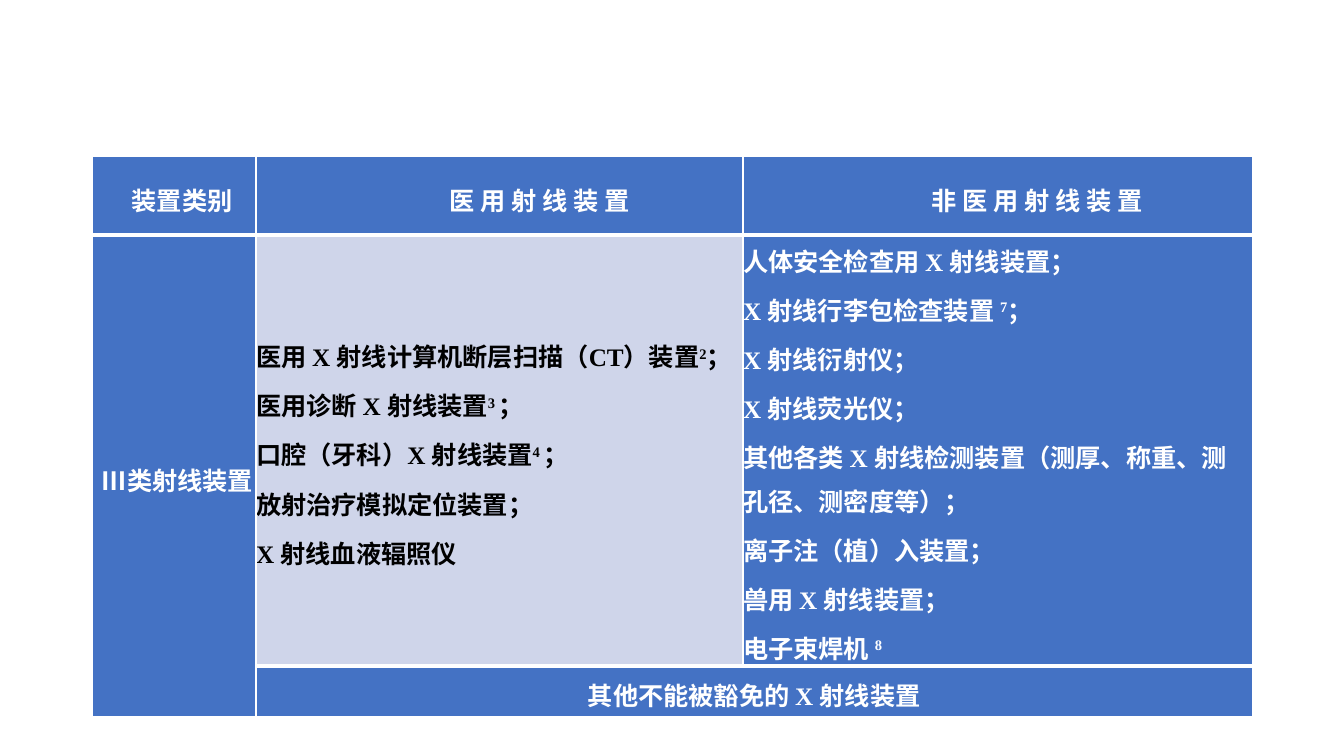
from pptx import Presentation
from pptx.dml.color import RGBColor
from pptx.enum.lang import MSO_LANGUAGE_ID as Language
from pptx.enum.text import MSO_ANCHOR as Anchor, PP_ALIGN as Align
from pptx.oxml.ns import qn
from pptx.util import Inches, Pt
from lxml.etree import SubElement

WHITE = RGBColor(0xFF, 0xFF, 0xFF)
BLACK = RGBColor(0, 0, 0)
BLUE = RGBColor(0x44, 0x72, 0xC4)
PALE = RGBColor(0xCF, 0xD5, 0xEA)
FONT = "Times New Roman"

COLUMN_WIDTHS = (1.62, 4.83, 5.05)
ROW_HEIGHTS = (0.78, 3.84, 0.5)

HEADERS = (
    ("装置类别", 0.15),
    ("医 用 射 线 装 置", 0.79),
    ("非 医 用 射 线 装 置", 0.78),
)
CATEGORY = "Ⅲ类射线装置"
# Every second piece of a line is a superscript note number.
MEDICAL = [
    ("医用 X 射线计算机断层扫描（CT）装置", "2", "；"),
    ("医用诊断 X 射线装置", "3 ", "；"),
    ("口腔（牙科）X 射线装置", "4 ", "；"),
    ("放射治疗模拟定位装置；",),
    ("X 射线血液辐照仪",),
]
NON_MEDICAL = [
    ("人体安全检查用 X 射线装置；",),
    ("X 射线行李包检查装置 ", "7", "；"),
    ("X 射线衍射仪；",),
    ("X 射线荧光仪；",),
    ("其他各类 X 射线检测装置（测厚、称重、测 孔径、测密度等）；",),
    ("离子注（植）入装置；",),
    ("兽用 X 射线装置；",),
    ("电子束焊机 ", "8"),
]
OTHERS = "其他不能被豁免的 X 射线装置"


def set_borders(cell, top, bottom):
    properties = cell._tc.get_or_add_tcPr()
    for side, width in (("L", 1), ("R", 1), ("T", top), ("B", bottom)):
        line = SubElement(properties, qn(f"a:ln{side}"), w=str(Pt(width)))
        fill = SubElement(line, qn("a:solidFill"))
        SubElement(fill, qn("a:srgbClr"), val=str(WHITE))


def fill_cell(cell, lines, align=Align.CENTER, indent=0, fill=BLUE, color=WHITE):
    cell.fill.solid()
    cell.fill.fore_color.rgb = fill
    cell.vertical_anchor = Anchor.MIDDLE
    cell.margin_left = cell.margin_right = cell.margin_top = cell.margin_bottom = 0
    frame = cell.text_frame
    for number, pieces in enumerate(lines):
        para = frame.add_paragraph() if number else frame.paragraphs[0]
        para.alignment = align
        para.line_spacing = 1.2
        para.space_before = Pt(3.6 if number else 0)
        para.space_after = Pt(0.2)
        para._p.get_or_add_pPr().set("marL", str(Inches(indent)))
        for place, piece in enumerate(pieces):
            span = para.add_run()
            span.text = piece
            span.font.name = FONT
            span.font.size = Pt(18)
            span.font.bold = True
            span.font.color.rgb = color
            span.font.language_id = Language.SIMPLIFIED_CHINESE
            if place % 2:
                span._r.get_or_add_rPr().set("baseline", "30000")


def main():
    deck = Presentation()
    deck.slide_width, deck.slide_height = Inches(13.33), Inches(7.5)
    page = deck.slides.add_slide(deck.slide_layouts[6])
    table = page.shapes.add_table(
        len(ROW_HEIGHTS), len(COLUMN_WIDTHS), Inches(0.92), Inches(1.55),
        Inches(sum(COLUMN_WIDTHS)), Inches(sum(ROW_HEIGHTS))).table
    table.first_row = table.horz_banding = False
    for column, width in zip(table.columns, COLUMN_WIDTHS):
        column.width = Inches(width)
    for row, height in zip(table.rows, ROW_HEIGHTS):
        row.height = Inches(height)

    table.cell(1, 0).merge(table.cell(2, 0))
    table.cell(2, 1).merge(table.cell(2, 2))
    for row, (top, bottom) in enumerate(((1, 3), (3, 3), (3, 1))):
        for column in range(len(COLUMN_WIDTHS)):
            category = column == 0 and row > 0
            set_borders(table.cell(row, column), top, 1 if category else bottom)

    for column, (header, indent) in enumerate(HEADERS):
        fill_cell(table.cell(0, column), [(header,)], indent=indent)
    fill_cell(table.cell(1, 0), [(CATEGORY,)], indent=0.06)
    fill_cell(table.cell(1, 1), MEDICAL, Align.LEFT, fill=PALE, color=BLACK)
    fill_cell(table.cell(1, 2), NON_MEDICAL, Align.LEFT)
    fill_cell(table.cell(2, 1), [(OTHERS,)])
    deck.save("out.pptx")


if __name__ == "__main__":
    main()
